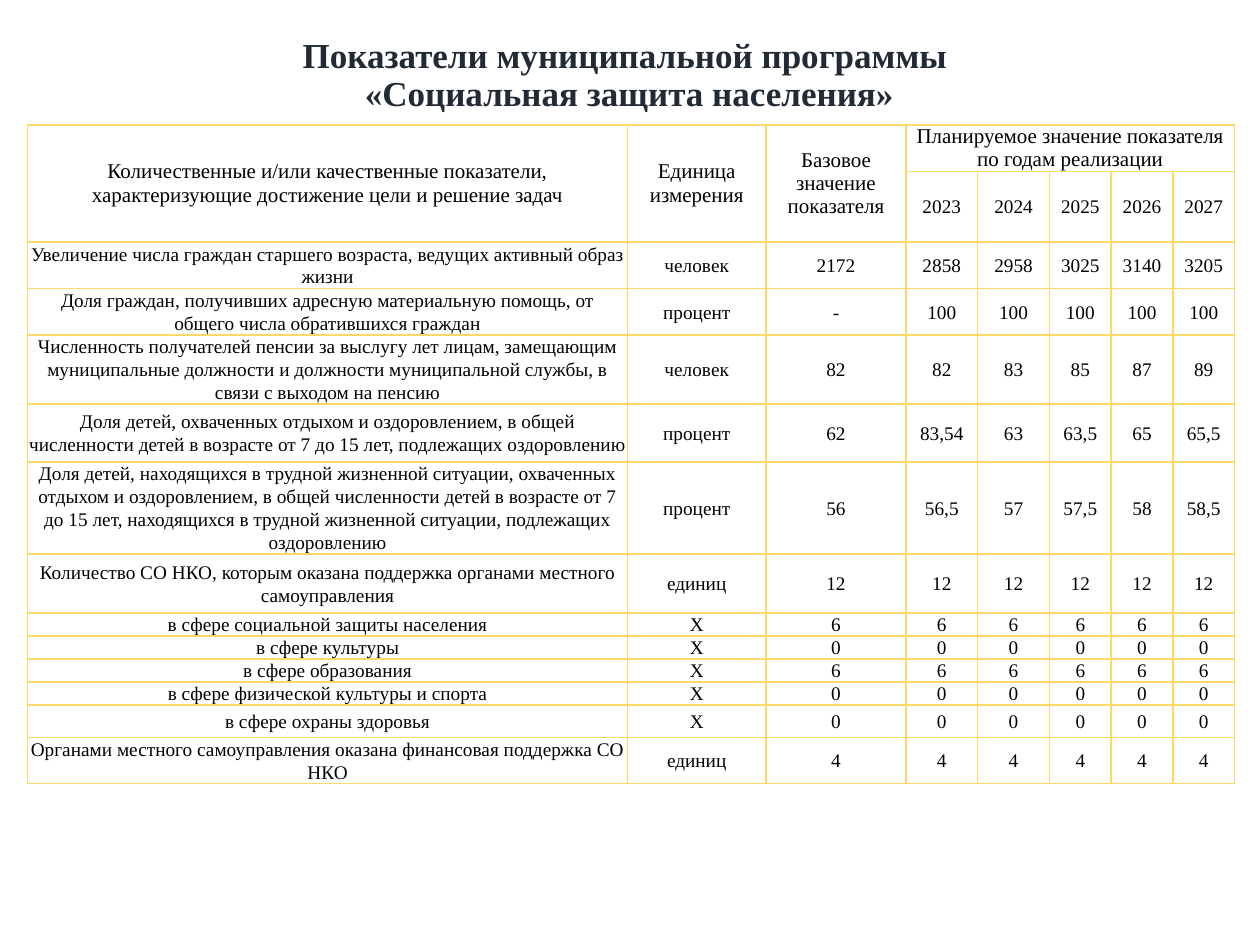
from lxml.etree import SubElement
from pptx import Presentation
from pptx.dml.color import RGBColor
from pptx.enum.text import MSO_ANCHOR as Anchor, MSO_AUTO_SIZE as AutoSize, PP_ALIGN as Align
from pptx.oxml.ns import qn
from pptx.util import Inches, Pt

FONT = "Times New Roman"
NAVY = RGBColor(0x22, 0x2A, 0x35)
BLACK = RGBColor(0, 0, 0)
GOLD = RGBColor(0xFF, 0xD9, 0x66)

TITLE = ("Показатели муниципальной программы ", "«Социальная защита населения»")
HEADINGS = (
    "Количественные и/или качественные показатели, характеризующие достижение цели и решение задач",
    "Единица измерения",
    "Базовое значение показателя",
    "Планируемое значение показателя по годам реализации",
)
YEARS = ("2023", "2024", "2025", "2026", "2027")
INDICATORS = (
    ("Увеличение числа граждан старшего возраста, ведущих активный образ жизни",
     "человек", "2172", "2858", "2958", "3025", "3140", "3205"),
    ("Доля граждан, получивших адресную материальную помощь, от общего числа обратившихся граждан",
     "процент", "-", *["100"] * 5),
    ("Численность получателей пенсии за выслугу лет лицам, замещающим муниципальные должности "
     "и должности муниципальной службы, в связи с выходом на пенсию",
     "человек", "82", "82", "83", "85", "87", "89"),
    ("Доля детей, охваченных отдыхом и оздоровлением, в общей численности детей в возрасте "
     "от 7 до 15 лет, подлежащих оздоровлению",
     "процент", "62", "83,54", "63", "63,5", "65", "65,5"),
    ("Доля детей, находящихся в трудной жизненной ситуации, охваченных отдыхом и оздоровлением, "
     "в общей численности детей в возрасте от 7 до 15 лет, находящихся в трудной жизненной "
     "ситуации, подлежащих оздоровлению",
     "процент", "56", "56,5", "57", "57,5", "58", "58,5"),
    ("Количество СО НКО, которым оказана поддержка органами местного самоуправления",
     "единиц", *["12"] * 6),
    ("в сфере социальной защиты населения", "Х", *["6"] * 6),
    ("в сфере культуры", "Х", *["0"] * 6),
    ("в сфере образования", "Х", *["6"] * 6),
    ("в сфере физической культуры и спорта", "Х", *["0"] * 6),
    ("в сфере охраны здоровья", "Х", *["0"] * 6),
    ("Органами местного самоуправления оказана финансовая поддержка СО НКО",
     "единиц", *["4"] * 6),
)
COLUMN_WIDTHS = (4.76, 1.1, 1.11, 0.57, 0.57, 0.49, 0.49, 0.49)
ROW_HEIGHTS = (0.37, 0.56, 0.37, 0.37, 0.54, 0.46, 0.73, 0.47,
               0.18, 0.18, 0.18, 0.18, 0.26, 0.36)


def add_span(para, text, size, color, bold=False):
    """Append one formatted run to a paragraph."""
    span = para.add_run()
    span.text = text
    span.font.name = FONT
    span.font.size = Pt(size)
    span.font.bold = bold
    span.font.color.rgb = color


def place_title(page, left, top, width, height):
    """Fill the title placeholder with the two-line heading."""
    box = page.shapes.title
    box.left, box.top, box.width, box.height = left, top, width, height
    frame = box.text_frame
    frame.auto_size = AutoSize.NONE
    frame.vertical_anchor = Anchor.MIDDLE
    para = frame.paragraphs[0]
    para.alignment = Align.CENTER
    para.line_spacing = 0.9
    add_span(para, TITLE[0], 20, NAVY, bold=True)
    para.add_line_break()
    add_span(para, TITLE[1], 20, NAVY, bold=True)


def frame_cell(cell):
    """Give a cell gold borders, no fill and narrow margins."""
    properties = cell._tc.get_or_add_tcPr()
    for side in ("a:lnL", "a:lnR", "a:lnT", "a:lnB"):
        line = SubElement(properties, qn(side), w=str(Pt(1)))
        fill = SubElement(line, qn("a:solidFill"))
        SubElement(fill, qn("a:srgbClr"), val=str(GOLD))
    cell.fill.background()
    cell.vertical_anchor = Anchor.MIDDLE
    cell.margin_left = cell.margin_right = Inches(0.01)
    cell.margin_top = cell.margin_bottom = 0


def write_cell(cell, text, heading=False):
    """Write centred text in a cell, larger for a heading."""
    para = cell.text_frame.paragraphs[0]
    para.alignment = Align.CENTER
    if not heading:
        para.line_spacing = 1.07
        para.space_after = Pt(8)
    add_span(para, text, 12 if heading else 11, BLACK)


def place_indicators(page, left, top, width, height):
    """Build the table of programme indicators."""
    table = page.shapes.add_table(
        len(ROW_HEIGHTS), len(COLUMN_WIDTHS), left, top, width, height).table
    table.first_row = table.horz_banding = False
    for column, size in zip(table.columns, COLUMN_WIDTHS):
        column.width = Inches(size)
    for row, size in zip(table.rows, ROW_HEIGHTS):
        row.height = Inches(size)
    for cell in table.iter_cells():
        frame_cell(cell)
    for index, text in enumerate(HEADINGS):
        cell = table.cell(0, index)
        cell.merge(table.cell(1, index) if index < 3 else table.cell(0, 7))
        write_cell(cell, text, heading=True)
    for index, year in enumerate(YEARS, 3):
        write_cell(table.cell(1, index), year)
    for row, values in enumerate(INDICATORS, 2):
        for column, value in enumerate(values):
            write_cell(table.cell(row, column), value)


def main():
    """Build and save the deck."""
    deck = Presentation()
    deck.slide_width, deck.slide_height = Inches(10), Inches(7.5)
    page = deck.slides.add_slide(deck.slide_layouts[5])
    place_title(page, Inches(0.43), Inches(0.21), Inches(9.13), Inches(0.79))
    place_indicators(page, Inches(0.22), Inches(0.99),
                     Inches(sum(COLUMN_WIDTHS)), Inches(sum(ROW_HEIGHTS)))
    deck.save("out.pptx")


if __name__ == "__main__":
    main()
